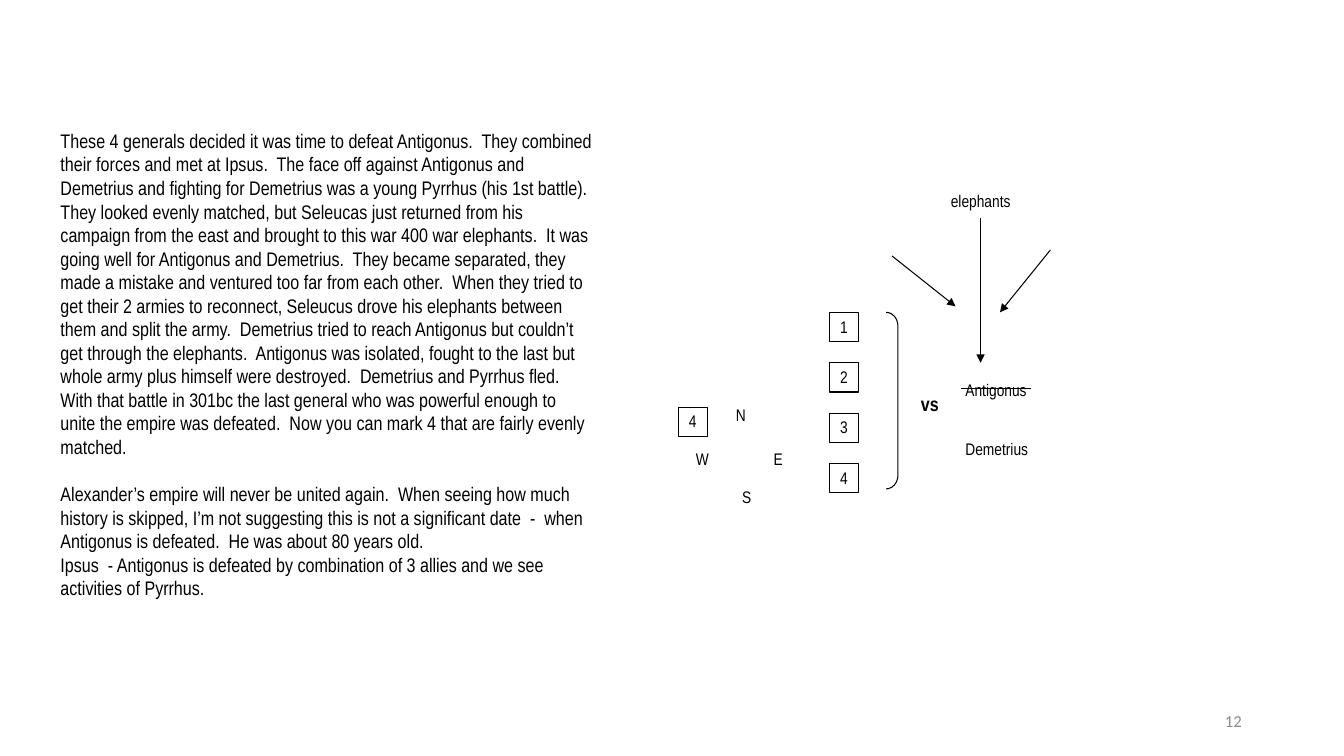
"""Build the slide on the battle of Ipsus: the account and a plan of the field."""
from dataclasses import dataclass

from pptx import Presentation
from pptx.dml.color import RGBColor
from pptx.enum import shapes, text
from pptx.oxml import ns, xmlchemy
from pptx.util import Cm, Pt


@dataclass(frozen=True)
class Theme:
    """Colours, fonts and sizes of the slide."""
    ink: RGBColor = RGBColor(0, 0, 0)
    grey: RGBColor = RGBColor(0x8C, 0x8C, 0x8C)
    font: str = "Arial Narrow"
    number_font: str = "Calibri"
    body: int = 14
    label: int = 12
    line: float = 0.75


THEME = Theme()
INSET = Cm(0.1)
LEFT, CENTER, RIGHT = text.PP_ALIGN.LEFT, text.PP_ALIGN.CENTER, text.PP_ALIGN.RIGHT

BATTLE = [
    "These 4 generals decided it was time to defeat Antigonus.",
    "They combined their forces and met at Ipsus.",
    "The face off against Antigonus and Demetrius and fighting for Demetrius was "
    "a young Pyrrhus (his 1st battle). They looked evenly matched, but Seleucas "
    "just returned from his campaign from the east and brought to this war 400 "
    "war elephants.",
    "It was going well for Antigonus and Demetrius.",
    "They became separated, they made a mistake and ventured too far from each "
    "other.",
    "When they tried to get their 2 armies to reconnect, Seleucus drove his "
    "elephants between them and split the army.",
    "Demetrius tried to reach Antigonus but couldn’t get through the elephants.",
    "Antigonus was isolated, fought to the last but whole army plus himself were "
    "destroyed.",
    "Demetrius and Pyrrhus fled.",
    "With that battle in 301bc the last general who was powerful enough to unite "
    "the empire was defeated.",
    "Now you can mark 4 that are fairly evenly matched.",
]
AFTERMATH = [
    "Alexander’s empire will never be united again.",
    "When seeing how much history is skipped, I’m not suggesting this is not a "
    "significant date  -  when Antigonus is defeated.",
    "He was about 80 years old.",
]
SUMMARY = ["Ipsus  - Antigonus is defeated by combination of 3 allies and we see "
           "activities of Pyrrhus."]
COMPASS = {"N": (18.34, 10.11), "E": (19.28, 11.2),
           "W": (17.37, 11.2), "S": (18.49, 12.17)}
CHARGES = [((24.71, 5.49), (24.71, 9.14)),
           ((22.48, 6.45), (24.08, 7.72)),
           ((26.47, 6.3), (25.2, 7.87))]


def write(frame, paragraphs, size=THEME.label, font=THEME.font, color=THEME.ink,
          bold=False, align=CENTER, gaps=None, inset=INSET,
          anchor=text.MSO_ANCHOR.TOP):
    """Fill a text frame; gaps maps a paragraph index to the points above it."""
    frame.word_wrap = True
    frame.auto_size = text.MSO_AUTO_SIZE.NONE
    frame.vertical_anchor = anchor
    if inset is not None:
        frame.margin_left = frame.margin_right = inset
        frame.margin_top = frame.margin_bottom = inset
    for index, words in enumerate(paragraphs):
        paragraph = frame.paragraphs[0] if index == 0 else frame.add_paragraph()
        paragraph.alignment = align
        paragraph.space_before = Pt((gaps or {}).get(index, 0))
        run = paragraph.add_run()
        run.text = words
        run.font.size, run.font.name, run.font.bold = Pt(size), font, bold
        run.font.color.rgb = color


def add_label(slide, box, *paragraphs, **style):
    """Add a text box at box, given in centimetres."""
    label = slide.shapes.add_textbox(*map(Cm, box))
    write(label.text_frame, paragraphs, **style)


def add_outline(slide, kind, box):
    """Add an unfilled preset shape with a thin dark line."""
    outline = slide.shapes.add_shape(kind, *map(Cm, box))
    outline.shadow.inherit = False
    outline.fill.background()
    outline.line.color.rgb = THEME.ink
    outline.line.width = Pt(THEME.line)
    return outline


def add_army(slide, left, top, number):
    """Add a numbered square that stands for one army."""
    army = add_outline(slide, shapes.MSO_SHAPE.RECTANGLE, (left, top, 0.74, 0.74))
    write(army.text_frame, [number])


def add_line(slide, start, end, arrow=False):
    """Add a straight line, with an arrowhead at its end if asked."""
    line = slide.shapes.add_connector(shapes.MSO_CONNECTOR.STRAIGHT,
                                      *map(Cm, start + end))
    line.line.color.rgb = THEME.ink
    line.line.width = Pt(THEME.line)
    properties = line._element.spPr
    if arrow:
        head = xmlchemy.OxmlElement("a:tailEnd")
        head.set("type", "triangle")
        properties.find(ns.qn("a:ln")).append(head)
    properties.append(xmlchemy.OxmlElement("a:effectLst"))


def add_account(slide):
    """Put the account in the body placeholder, without bullets."""
    title, body = slide.shapes.title, slide.placeholders[1]
    title._element.getparent().remove(title._element)
    body.left, body.top, body.width, body.height = map(Cm, (1.27, 3.12, 13.92, 12.6))
    account = ["  ".join(sentences) for sentences in (BATTLE, AFTERMATH, SUMMARY)]
    write(body.text_frame, account, size=THEME.body, align=LEFT,
          gaps={1: 17}, inset=None)
    for paragraph in body.text_frame.paragraphs:
        layout = paragraph._p.get_or_add_pPr()
        layout.set("marL", "0")
        layout.set("indent", "0")
        layout.append(xmlchemy.OxmlElement("a:buNone"))


def add_compass(slide):
    """Add the four directions and the army beside them."""
    for direction, place in COMPASS.items():
        add_label(slide, place + (0.66, 0.69), direction)
    add_army(slide, 17.09, 10.26, "4")


def add_battle(slide):
    """Add the four allies, their two opponents and the elephant charge."""
    add_label(slide, (24.23, 9.47, 3.18, 1.42), "Antigonus", "Demetrius",
              align=LEFT, gaps={1: 28})
    for index in range(4):
        add_army(slide, 20.9, 7.87 + 1.27 * index, str(index + 1))
    allies = add_outline(slide, shapes.MSO_SHAPE.LEFT_BRACKET,
                         (22.33, 7.87, 0.3, 4.45))
    allies.rotation = 180
    allies.adjustments[0] = 1.17
    add_label(slide, (23.11, 9.78, 0.97, 0.79), "vs",
              size=THEME.body, bold=True, align=LEFT)
    add_line(slide, (24.23, 9.78), (25.98, 9.78))
    for start, end in CHARGES:
        add_line(slide, start, end, arrow=True)
    add_label(slide, (22.96, 4.7, 3.51, 0.97), "elephants")


def main():
    """Build and save the slide."""
    deck = Presentation()
    deck.slide_width, deck.slide_height = Cm(33.87), Cm(19.05)
    slide = deck.slides.add_slide(deck.slide_layouts[1])
    add_account(slide)
    add_label(slide, (23.93, 17.65, 7.62, 1.02), "12", font=THEME.number_font,
              color=THEME.grey, align=RIGHT, inset=None,
              anchor=text.MSO_ANCHOR.MIDDLE)
    add_compass(slide)
    add_battle(slide)
    deck.save("out.pptx")


if __name__ == "__main__":
    main()
